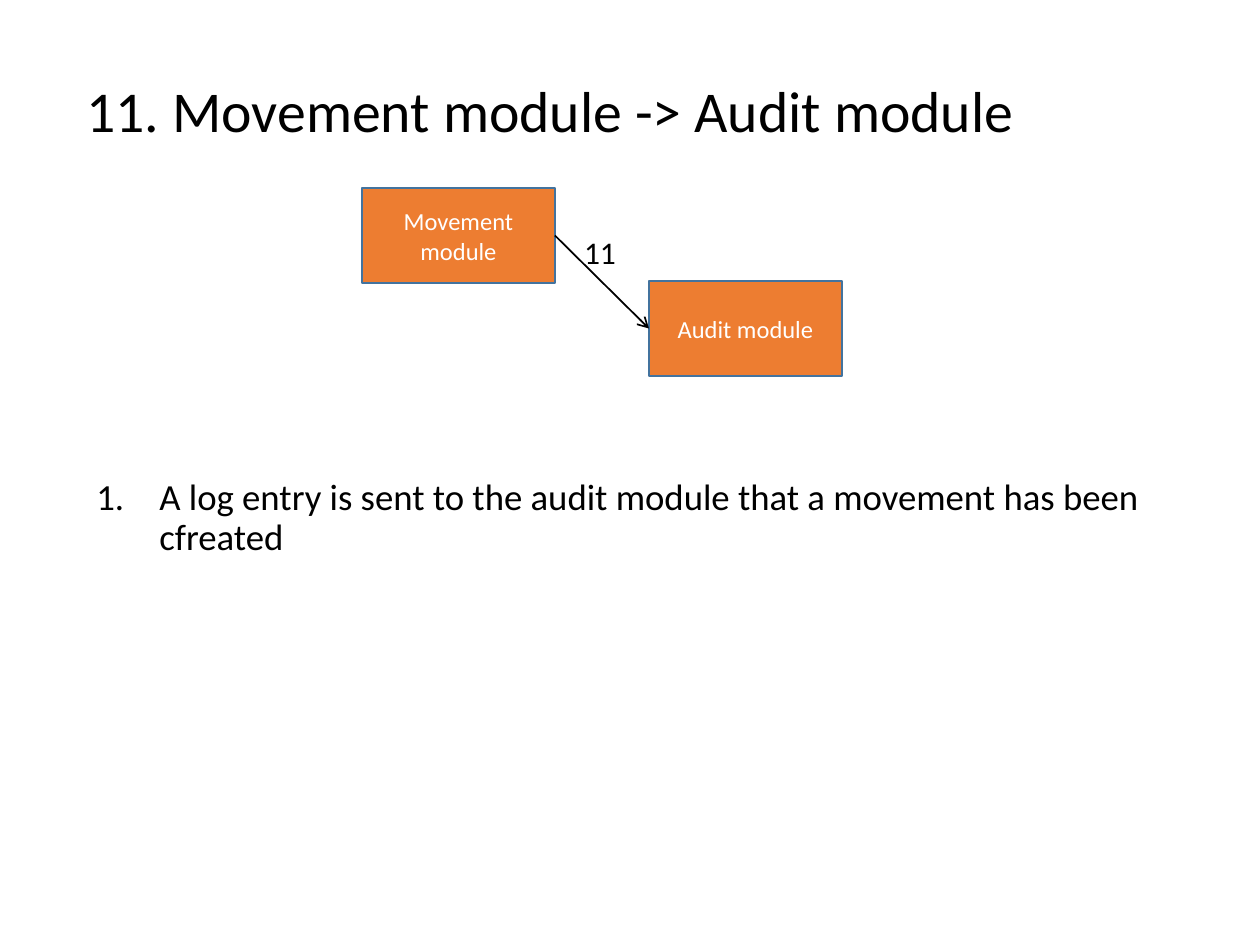
from lxml import etree
from pptx import Presentation
from pptx.dml.color import RGBColor
from pptx.enum.shapes import MSO_CONNECTOR, MSO_SHAPE
from pptx.enum.text import MSO_ANCHOR, PP_ALIGN
from pptx.oxml.ns import qn
from pptx.util import Emu, Pt

PX = 914400 // 126
FONT = "Calibri"
BLACK = RGBColor(0x00, 0x00, 0x00)
WHITE = RGBColor(0xFF, 0xFF, 0xFF)
ORANGE = RGBColor(0xED, 0x7D, 0x31)
BLUE = RGBColor(0x43, 0x73, 0x9E)

TITLE = "11. Movement module -> Audit module"
STEPS = ["A log entry is sent to the audit module that a movement has been cfreated"]
MODULES = [("Movement module", 362, 188), ("Audit module", 649, 281)]
MODULE_W, MODULE_H = 193, 95
FLOW_LABEL = "11"
STEP_INDENT = 63


def px(*lengths):
    return [Emu(n * PX) for n in lengths]


def add_run(p, text, size, color=BLACK):
    r = p.add_run()
    r.text = text
    r.font.name = FONT
    r.font.size = Pt(size)
    r.font.color.rgb = color


def add_text(slide, box, lines, size, anchor=MSO_ANCHOR.TOP, wrap=True):
    """Add a text box with one paragraph a line and return its paragraphs."""
    tf = slide.shapes.add_textbox(*px(*box)).text_frame
    tf.word_wrap = wrap
    tf.vertical_anchor = anchor
    for i, line in enumerate(lines):
        p = tf.add_paragraph() if i else tf.paragraphs[0]
        add_run(p, line, size)
    return tf.paragraphs


def number(p):
    pPr = p._p.get_or_add_pPr()
    pPr.set("marL", str(STEP_INDENT * PX))
    pPr.set("indent", str(-STEP_INDENT * PX))
    etree.SubElement(pPr, qn("a:buFont"), typeface="+mj-lt")
    etree.SubElement(pPr, qn("a:buAutoNum"), type="arabicPeriod")


def add_module(slide, name, x, y):
    sp = slide.shapes.add_shape(MSO_SHAPE.RECTANGLE, *px(x, y, MODULE_W, MODULE_H))
    sp.shadow.inherit = False
    sp.fill.solid()
    sp.fill.fore_color.rgb = ORANGE
    sp.line.color.rgb = BLUE
    sp.line.width = Pt(1)
    tf = sp.text_frame
    tf.word_wrap = True
    tf.vertical_anchor = MSO_ANCHOR.MIDDLE
    p = tf.paragraphs[0]
    p.alignment = PP_ALIGN.CENTER
    add_run(p, name, 14, WHITE)
    return sp


def add_arrow(slide, source, target):
    """Join the right side of source to the left side of target."""
    line = slide.shapes.add_connector(MSO_CONNECTOR.STRAIGHT, 0, 0, 0, 0)
    line.begin_connect(source, 3)
    line.end_connect(target, 1)
    line.line.color.rgb = BLACK
    line.line.width = Pt(1)
    etree.SubElement(line.line._get_or_add_ln(), qn("a:tailEnd"), type="arrow")
    etree.SubElement(line._element.spPr, qn("a:effectLst"))


prs = Presentation()
prs.slide_width, prs.slide_height = px(1260, 945)
slide = prs.slides.add_slide(prs.slide_layouts[6])

title, = add_text(slide, (74, 40, 1086, 147), [TITLE], 33, MSO_ANCHOR.MIDDLE)
title.line_spacing = 0.9

for step in add_text(slide, (84, 473, 1101, 456), STEPS, 21):
    step.line_spacing = 0.9
    step.space_before = Pt(7.5)
    number(step)

movement, audit = [add_module(slide, *module) for module in MODULES]
label, = add_text(slide, (571, 227, 58, 50), [FLOW_LABEL], 18, wrap=False)
label.alignment = PP_ALIGN.CENTER
add_arrow(slide, movement, audit)

prs.save("out.pptx")
